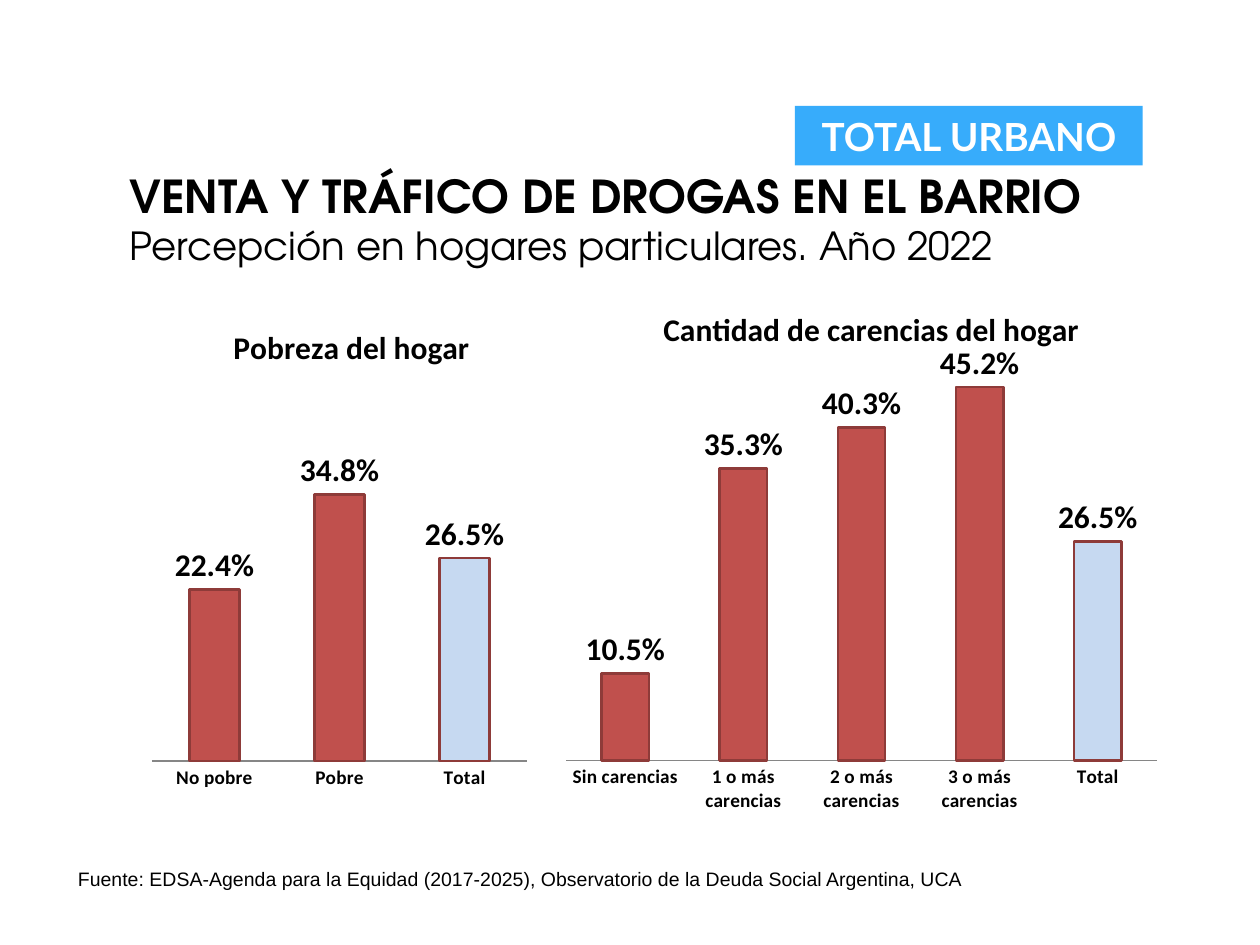
from lxml import etree
from pptx import Presentation
from pptx import util as u
from pptx.chart.data import CategoryChartData
from pptx.dml.color import RGBColor
from pptx.enum import chart as ch, shapes, text
from pptx.oxml.ns import qn

BLACK = RGBColor(0, 0, 0)
WHITE = RGBColor(0xFF, 0xFF, 0xFF)
SKY = RGBColor(0x37, 0xAC, 0xFB)
RED = RGBColor(0xC0, 0x50, 0x4D)
EDGE = RGBColor(0x8E, 0x3B, 0x39)
PALE = RGBColor(0xC6, 0xD9, 0xF1)
GRAY = RGBColor(0x86, 0x86, 0x86)
WIDE, HIGH = 10, 7.5


def place(x, y, w, h):
    """Turn shares of the slide's size into lengths."""
    return [u.Inches(s * n) for s, n in zip((x, y, w, h), (WIDE, HIGH) * 2)]


def style(font, size, color, bold=False, name="Calibri"):
    font.size, font.bold, font.name = u.Pt(size), bold, name
    font.color.rgb = color


def write(shape, lines, name, color, align=text.PP_ALIGN.LEFT):
    """Fill a shape with lines of (words, size, bold)."""
    frame = shape.text_frame
    frame.word_wrap = True
    frame.text = "\n".join(line[0] for line in lines)
    for para, (_, size, bold) in zip(frame.paragraphs, lines):
        para.alignment = align
        style(para.runs[0].font, size, color, bold, name)


def add_text(slide, box, lines, name):
    write(slide.shapes.add_textbox(*place(*box)), lines, name, BLACK)


def add_tag(slide, box, words):
    tag = slide.shapes.add_shape(shapes.MSO_SHAPE.RECTANGLE, *place(*box))
    tag.shadow.inherit = False
    tag.fill.solid()
    tag.fill.fore_color.rgb = SKY
    tag.line.fill.background()
    write(tag, [(words, 22.1, True)], "Lato", WHITE, text.PP_ALIGN.CENTER)


def set_plot(chart, area):
    """Fix the inner plot area, in shares of the chart's size."""
    plot = chart._chartSpace.chart.plotArea
    for old in plot.findall(qn("c:layout")):
        plot.remove(old)
    layout = etree.Element(qn("c:layout"))
    manual = etree.SubElement(layout, qn("c:manualLayout"))
    keys = ("layoutTarget", "xMode", "yMode", "x", "y", "w", "h")
    for key, val in zip(keys, ("inner", "edge", "edge", *area)):
        etree.SubElement(manual, qn("c:" + key)).set("val", str(val))
    plot.insert(0, layout)


def add_bars(slide, box, title, bars, area):
    """Add a column chart whose last bar, the total, is pale."""
    data = CategoryChartData(number_format="0.0%")
    data.categories = list(bars)
    data.add_series("Hogares", list(bars.values()))
    chart = slide.shapes.add_chart(
        ch.XL_CHART_TYPE.COLUMN_CLUSTERED, *place(*box), data).chart
    style(chart.font, 18, BLACK)
    chart.has_legend = False
    chart.has_title = True
    chart.chart_title.include_in_layout = False
    frame = chart.chart_title.text_frame
    frame.text = title
    style(frame.paragraphs[0].runs[0].font, 18, BLACK, True)

    val, cat = chart.value_axis, chart.category_axis
    val.minimum_scale, val.maximum_scale = 0, 0.5
    val.has_major_gridlines = val.visible = False
    cat.major_tick_mark = ch.XL_TICK_MARK.NONE
    cat.format.line.color.rgb = GRAY
    cat.format.line.width = u.Pt(0.75)
    style(cat.tick_labels.font, 11, BLACK, True)

    plot = chart.plots[0]
    plot.gap_width, plot.overlap, plot.vary_by_categories = 150, -25, False
    series = plot.series[0]
    for part, color in ((series, RED), (series.points[len(bars) - 1], PALE)):
        part.format.fill.solid()
        part.format.fill.fore_color.rgb = color
        part.format.line.color.rgb = EDGE
        part.format.line.width = u.Pt(1.5)
    tags = series.data_labels
    tags.show_value = True
    tags.number_format, tags.number_format_is_linked = "0.0%", False
    tags.position = ch.XL_LABEL_POSITION.OUTSIDE_END
    style(tags.font, 18, BLACK, True)
    set_plot(chart, area)


def main():
    deck = Presentation()
    deck.slide_width, deck.slide_height = u.Inches(WIDE), u.Inches(HIGH)
    slide = deck.slides.add_slide(deck.slide_layouts[6])
    add_bars(slide, (0.443, 0.301, 0.497, 0.585),
             "Cantidad de carencias del hogar",
             {"Sin carencias": 0.105, "1 o más carencias": 0.353,
              "2 o más carencias": 0.403, "3 o más carencias": 0.452,
              "Total": 0.265},
             (0.013, 0.114, 0.943, 0.747))
    add_text(slide, (0.093, 0.171, 0.829, 0.121),
             [("VENTA Y TRÁFICO DE DROGAS EN EL BARRIO", 25.9, True),
              ("Percepción en hogares particulares. Año 2022", 22.1, False)],
             "TeX Gyre Adventor")
    add_tag(slide, (0.631, 0.112, 0.276, 0.063), "TOTAL URBANO")
    add_bars(slide, (0.115, 0.32, 0.328, 0.569), "Pobreza del hogar",
             {"No pobre": 0.224, "Pobre": 0.348, "Total": 0.265},
             (0.017, 0.141, 0.908, 0.712))
    add_text(slide, (0.052, 0.911, 0.924, 0.039),
             [("Fuente: EDSA-Agenda para la Equidad (2017-2025), Observatorio "
               "de la Deuda Social Argentina, UCA", 11.1, False)], "Arial")
    deck.save("out.pptx")


if __name__ == "__main__":
    main()
